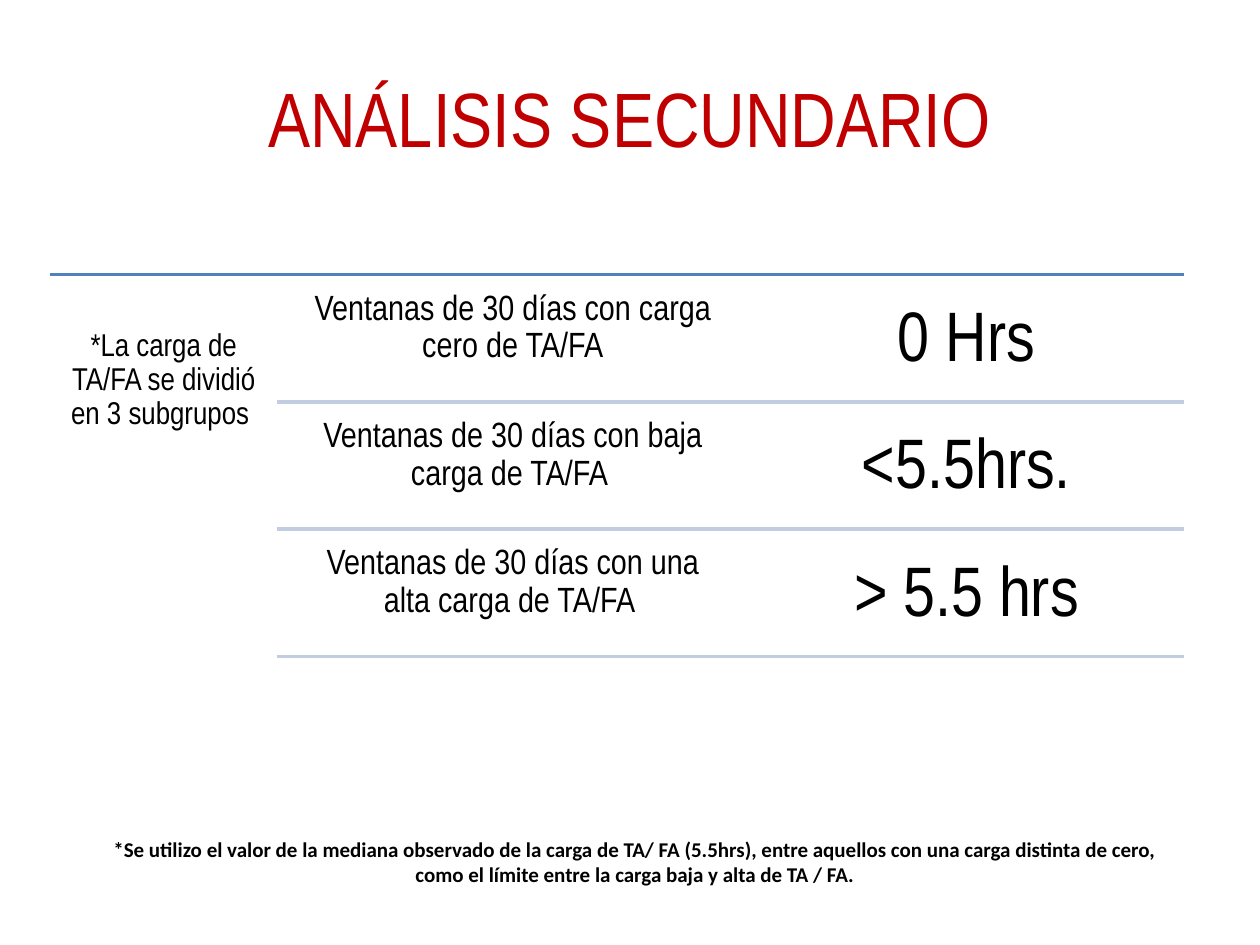
import dataclasses

import lxml.etree
import pptx
import pptx.dml.color
import pptx.enum.shapes
import pptx.enum.text
import pptx.oxml.ns
import pptx.util

Inches = pptx.util.Inches
COLORS = {"title": "C00000", "text": "000000", "top": "4F81BD", "rule": "C2CDE1"}
NARROW = "Arial Narrow"
LEFT, INNER, RIGHT = 0.4, 2.2, 9.4
TOP, STEP = 2.18, 1.01


@dataclasses.dataclass
class Group:
    label: str
    limit: str


GROUPS = [
    Group("Ventanas de 30 días con carga cero de TA/FA", "0 Hrs"),
    Group("Ventanas de 30 días con baja carga de TA/FA ", "<5.5hrs."),
    Group("Ventanas de 30 días con una alta carga de TA/FA ", "> 5.5 hrs"),
]


def rgb(name: str) -> pptx.dml.color.RGBColor:
    return pptx.dml.color.RGBColor.from_string(COLORS[name])


def write(shape, text: str, *, size: float, font: str = NARROW,
          color: str = "text", bold: bool = False, inset: float | None = None,
          spacing: float | None = None, anchor: str = "TOP") -> None:
    frame = shape.text_frame
    frame.word_wrap = True
    frame.vertical_anchor = pptx.enum.text.MSO_ANCHOR[anchor]
    if inset is not None:
        frame.margin_left = frame.margin_right = Inches(inset)
        frame.margin_top = frame.margin_bottom = Inches(inset)
    para = frame.paragraphs[0]
    para.alignment = pptx.enum.text.PP_ALIGN.CENTER
    if spacing is not None:
        para.line_spacing = spacing
    run = para.add_run()
    run.text = text
    run.font.name = font
    run.font.size = pptx.util.Pt(size)
    run.font.bold = bold
    run.font.color.rgb = rgb(color)


def add_text(slide, text: str, left: float, top: float, width: float,
             height: float, **style):
    box = slide.shapes.add_textbox(
        Inches(left), Inches(top), Inches(width), Inches(height))
    write(box, text, **style)
    return box


def add_rule(slide, left: float, top: float, color: str) -> None:
    line = slide.shapes.add_connector(
        pptx.enum.shapes.MSO_CONNECTOR.STRAIGHT,
        Inches(left), Inches(top), Inches(RIGHT), Inches(top))
    line.line.color.rgb = rgb(color)
    line.line.width = pptx.util.Pt(2)
    props = line._element.spPr
    lxml.etree.SubElement(props, pptx.oxml.ns.qn("a:effectLst"))


def add_group(slide, group: Group, top: float) -> None:
    """Draw one row of the list and the rule that closes it."""
    width, height = 3.46, 0.96
    add_text(slide, group.label, 2.34, top + 0.04, width, height,
             size=20, inset=0.08, spacing=0.9)
    add_text(slide, group.limit, 5.94, top + 0.04, width, height,
             size=40, inset=0.17, spacing=0.9)
    add_rule(slide, INNER, top + STEP, "rule")


def main() -> None:
    deck = pptx.Presentation()
    deck.slide_width, deck.slide_height = Inches(10), Inches(7.5)
    slide = deck.slides.add_slide(deck.slide_layouts[5])

    title = slide.shapes.title
    title.left, title.top = Inches(0.5), Inches(0.3)
    title.width, title.height = Inches(9), Inches(1.25)
    write(title, "ANÁLISIS SECUNDARIO", size=44, color="title", anchor="MIDDLE")

    add_rule(slide, LEFT, TOP, "top")
    add_text(slide, "*La carga de TA/FA se dividió en 3 subgrupos ",
             LEFT, 2.54, INNER - LEFT, 2.71, size=18, inset=0.07, spacing=0.9)
    for row, group in enumerate(GROUPS):
        add_group(slide, group, TOP + row * STEP)

    note = add_text(
        slide,
        "*Se utilizo el valor de la mediana observado de la carga de TA/ FA "
        "(5.5hrs), entre aquellos con una carga distinta de cero, como el "
        "límite entre la carga baja y alta de TA / FA.",
        0.67, 6.59, 8.74, 0.5, size=12, font="Calibri", bold=True)
    note.text_frame.auto_size = pptx.enum.text.MSO_AUTO_SIZE.SHAPE_TO_FIT_TEXT

    deck.save("out.pptx")


if __name__ == "__main__":
    main()
